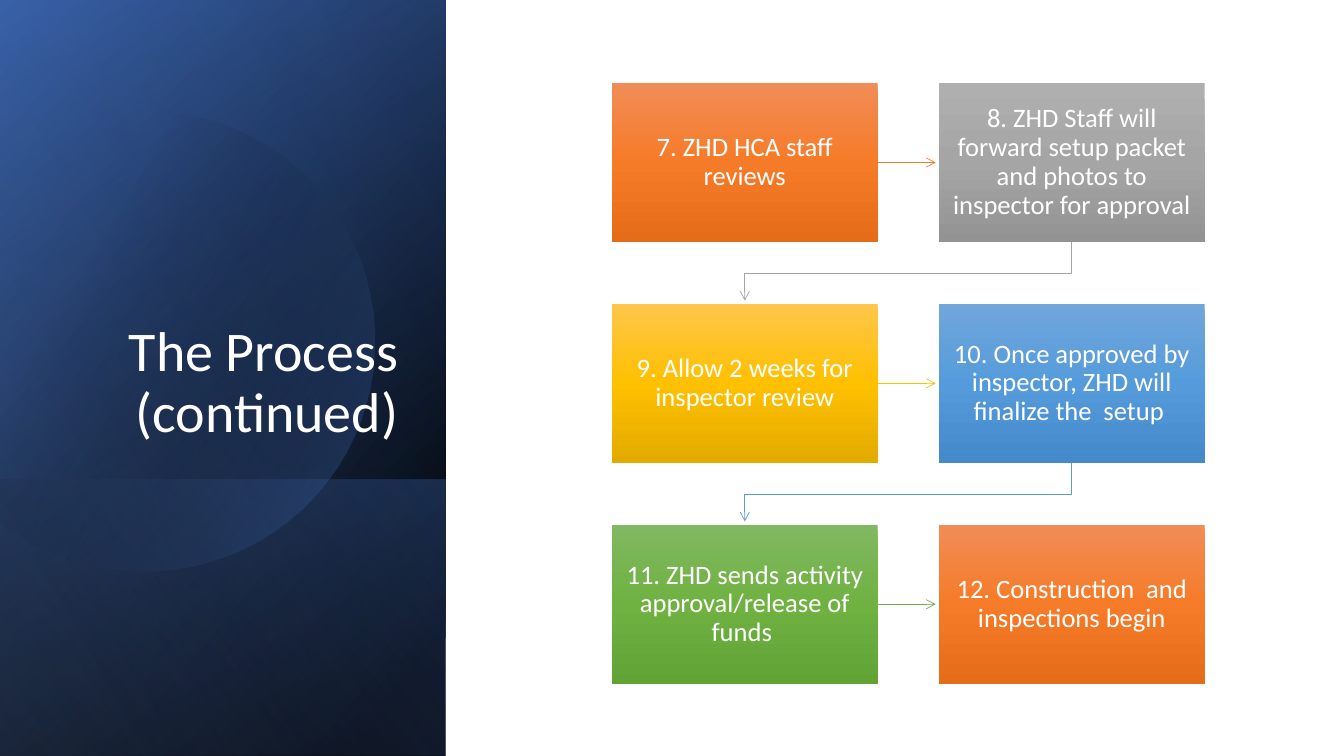
from lxml import etree
from pptx import Presentation
from pptx.dml.color import RGBColor
from pptx.enum.shapes import MSO_CONNECTOR, MSO_SHAPE
from pptx.enum.text import MSO_ANCHOR, MSO_AUTO_SIZE, PP_ALIGN
from pptx.oxml import parse_xml
from pptx.oxml.ns import nsdecls, qn
from pptx.util import Cm, Pt

RECTANGLE = MSO_SHAPE.RECTANGLE
STRAIGHT, ELBOW = MSO_CONNECTOR.STRAIGHT, MSO_CONNECTOR.ELBOW
MIDDLE, BOTTOM = MSO_ANCHOR.MIDDLE, MSO_ANCHOR.BOTTOM
CENTER, RIGHT = PP_ALIGN.CENTER, PP_ALIGN.RIGHT
NO_AUTOFIT = MSO_AUTO_SIZE.NONE

FONT = "Calibri"
WHITE = RGBColor(0xFF, 0xFF, 0xFF)
BLACK = RGBColor(0x00, 0x00, 0x00)
NAVY = RGBColor(0x2F, 0x55, 0x97)
BLUE = RGBColor(0x44, 0x72, 0xC4)
PALE_BLUE = RGBColor(0x8F, 0xAA, 0xDC)


def shades(*codes):
    return [RGBColor.from_string(code) for code in codes]


# Each palette: top, middle and bottom of the card, then its arrow
ORANGE = shades("F18C57", "F67B28", "E56C19", "ED7D31")
GRAY = shades("AFAFAF", "A5A5A5", "939393", "A5A5A5")
GOLD = shades("FFC64B", "FFC000", "E3AB00", "FFC000")
SKY = shades("71A6DB", "559BDB", "448ACA", "5B9BD5")
GREEN = shades("81B861", "6FB242", "62A336", "70AD47")

STEPS = [
    ("7. ZHD HCA staff reviews", ORANGE),
    ("8. ZHD Staff will forward setup packet and photos to inspector for approval", GRAY),
    ("9. Allow 2 weeks for inspector review", GOLD),
    ("10. Once approved by inspector, ZHD will finalize the  setup ", SKY),
    ("11. ZHD sends activity approval/release of funds ", GREEN),
    ("12. Construction  and inspections begin", ORANGE),
]

# Rotated overlays: top and height in cm, gradient angle, stops (position, colour, opacity)
BASE_LAYERS = [
    (0, 19.05, 50, [(8, BLACK, 100), (100, NAVY, 100)]),
    (0, 19.05, 30, [(0, BLACK, 0), (99, BLUE, 46)]),
    (12.09, 6.96, 130, [(2, BLUE, 29), (100, BLACK, 30)]),
]
TOP_LAYER = (0, 19.05, 120, [(0, BLACK, 0), (99, PALE_BLUE, 11)])

# Disc outline in cm: one point is a line, three points are a curve
DISC_START = (3.78, 2.79)
DISC_PARTS = [
    [(6.25, 2.84), (8.51, 4.5), (9.22, 6.98)],
    [(10.11, 10.08), (8.33, 13.28), (5.26, 14.17)],
    [(3.33, 14.73), (1.35, 14.25), (-0.08, 13.06)],
    [(-0.38, 12.78)],
    [(-0.38, 4.45)],
    [(0, 4.09)],
    [(0.58, 3.61), (1.27, 3.25), (2.03, 3.02)],
    [(2.62, 2.87), (3.2, 2.79), (3.78, 2.79)],
]
CURVE_STEPS = 20


def paint_gradient(shape, stops, angle):
    shape.shadow.inherit = False
    shape.line.fill.background()
    shape.fill.gradient()
    marks = "".join(
        f'<a:gs pos="{position * 1000}"><a:srgbClr val="{color}">'
        f'<a:alpha val="{opacity * 1000}"/></a:srgbClr></a:gs>'
        for position, color, opacity in stops)
    gradient = shape._element.spPr.find(qn("a:gradFill"))
    gradient.getparent().replace(gradient, parse_xml(
        f'<a:gradFill rotWithShape="1" {nsdecls("a")}><a:gsLst>{marks}</a:gsLst>'
        f'<a:lin ang="{angle * 60000}" scaled="0"/></a:gradFill>'))


def format_text(shape, text, size, align, anchor):
    frame = shape.text_frame
    frame.text = text
    frame.word_wrap = True
    frame.auto_size = NO_AUTOFIT
    frame.vertical_anchor = anchor
    para = frame.paragraphs[0]
    para.alignment = align
    para.line_spacing = 0.9
    for span in para.runs:
        span.font.name = FONT
        span.font.size = Pt(size)
        span.font.color.rgb = WHITE


def add_layer(page, box, layer):
    left, top, width, _ = box
    offset, height, angle, stops = layer
    # A quarter turn swaps the sides around the same centre
    shape = page.shapes.add_shape(
        RECTANGLE, left + (width - Cm(height)) // 2,
        top + Cm(offset) + (Cm(height) - width) // 2, Cm(height), width)
    shape.rotation = 90
    shape._element.spPr.find(qn("a:xfrm")).set("flipH", "1")
    paint_gradient(shape, stops, angle)


def disc_points():
    points = [DISC_START]
    for part in DISC_PARTS:
        if len(part) == 1:
            points += part
            continue
        corners = list(zip(points[-1], *part))
        for step in range(1, CURVE_STEPS + 1):
            t = step / CURVE_STEPS
            u = 1 - t
            points.append(tuple(
                u**3 * a + 3 * u * u * t * b + 3 * u * t * t * c + t**3 * d
                for a, b, c, d in corners))
    return points


def build_panel(page, box):
    left, top, _, _ = box
    for layer in BASE_LAYERS:
        add_layer(page, box, layer)
    # Translucent disc
    start, *rest = [(left + Cm(x), top + Cm(y)) for x, y in disc_points()]
    builder = page.shapes.build_freeform(*start)
    builder.add_line_segments(rest)
    paint_gradient(builder.convert_to_shape(), [(29, BLACK, 0), (100, BLUE, 43)], 30)
    add_layer(page, box, TOP_LAYER)
    # Title, raised above the panel
    title = page.shapes.title
    title.left, title.top = left + Cm(1.63), top + Cm(4.67)
    title.width, title.height = Cm(8.66), Cm(6.65)
    format_text(title, "The Process (continued)", 40, RIGHT, BOTTOM)
    page.shapes._spTree.append(title._element)


def style_arrow(arrow, color):
    arrow.line.color.rgb = color
    arrow.line.width = Pt(0.5)
    etree.SubElement(arrow.line._get_or_add_ln(), qn("a:tailEnd"), type="arrow")
    etree.SubElement(arrow._element.spPr, qn("a:effectLst"))


def add_elbow(page, source, target, gap):
    start_x = source.left + source.width // 2
    end_x = target.left + target.width // 2
    start_y, end_y = source.top + source.height, target.top - gap
    across, down = start_x - end_x, end_y - start_y
    left, top = (start_x + end_x - down) // 2, (start_y + end_y - across) // 2
    arrow = page.shapes.add_connector(ELBOW, left, top, left + down, top + across)
    properties = arrow._element.spPr
    properties.find(qn("a:xfrm")).set("rot", "5400000")
    geometry = properties.find(qn("a:prstGeom"))
    guides = geometry.find(qn("a:avLst"))
    if guides is None:
        guides = etree.SubElement(geometry, qn("a:avLst"))
    etree.SubElement(guides, qn("a:gd"), name="adj1", fmla="val 53000")
    return arrow


def build_steps(page, box):
    left, top, width, height = box
    card_width, card_height, gap = Cm(6.7), Cm(4.01), Cm(0.08)
    pitch_x, pitch_y = width - card_width, (height - card_height) // 2
    # Cards, two to a row
    cards = []
    for index, (text, palette) in enumerate(STEPS):
        row, column = divmod(index, 2)
        card = page.shapes.add_shape(RECTANGLE, left + column * pitch_x,
                                     top + row * pitch_y, card_width, card_height)
        paint_gradient(card, [(i * 50, color, 100) for i, color in enumerate(palette[:3])], 90)
        format_text(card, text, 19, CENTER, MIDDLE)
        frame = card.text_frame
        frame.margin_left = frame.margin_right = Cm(0.33)
        frame.margin_top = frame.margin_bottom = Cm(0.35)
        cards.append(card)
    # Arrows from each step to the next
    for index, (source, target) in enumerate(zip(cards, cards[1:])):
        if index % 2:
            arrow = add_elbow(page, source, target, gap)
        else:
            middle = source.top + source.height // 2
            arrow = page.shapes.add_connector(
                STRAIGHT, source.left + source.width, middle, target.left - gap, middle)
            arrow.begin_connect(source, 3)
        style_arrow(arrow, STEPS[index][1][3])


def main():
    deck = Presentation()
    deck.slide_width, deck.slide_height = Cm(33.87), Cm(19.05)
    page = deck.slides.add_slide(deck.slide_layouts[5])
    build_panel(page, (0, 0, Cm(11.23), Cm(19.05)))
    build_steps(page, (Cm(15.42), Cm(2.09), Cm(14.94), Cm(15.14)))
    deck.save("out.pptx")


if __name__ == "__main__":
    main()
